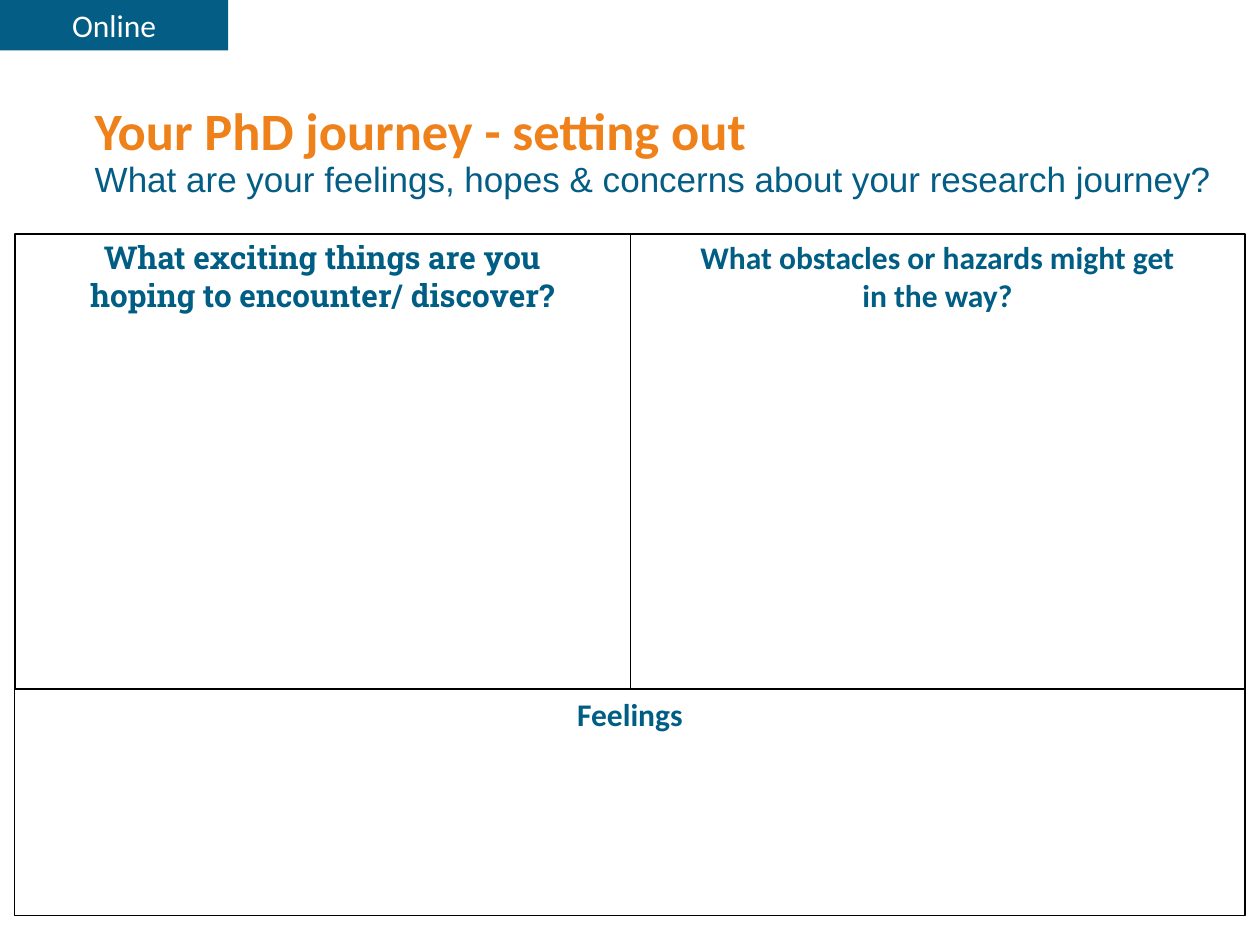
from lxml.etree import SubElement
from pptx import Presentation
from pptx.dml.color import RGBColor
from pptx.enum.shapes import MSO_CONNECTOR as LINE, MSO_SHAPE as SHAPE
from pptx.enum.text import MSO_ANCHOR as ANCHOR, PP_ALIGN as ALIGN
from pptx.oxml.ns import qn
from pptx.util import Cm, Pt


def color(code):
    return RGBColor.from_string(code)


def style(run, size, code, bold=True, face="Calibri"):
    font = run.font
    font.size, font.bold, font.name = Pt(size), bold, face
    font.color.rgb = color(code)


deck = Presentation()
deck.slide_width, deck.slide_height = Cm(25.4), Cm(19.05)
slide = deck.slides.add_slide(deck.slide_layouts[6])
shapes = slide.shapes

# Title and question, split by a line break
title = shapes.add_textbox(Cm(1.91), Cm(2.13), Cm(22.81), Cm(4.6))
frame = title.text_frame
frame.word_wrap = True
frame.margin_left = frame.margin_top = frame.margin_right = frame.margin_bottom = 0
par = frame.paragraphs[0]
par.text = ("Your PhD journey - setting out\v"
            "What are your feelings, hopes & concerns about your research journey?")
par.line_spacing = 0.9
style(par.runs[0], 30, "EF811B")
style(par.runs[1], 20, "035D85", False, "Arial")

# Outlined panels, stacked, and the tab in the corner
left, top, width = 0.3, 4.72, 24.8
tall, low = 9.17, 4.57
panels = []
for x, y, w, h, fill, line in [
    (left, top + tall, width, low, None, 0.75),
    (left, top, width, tall, None, 1),
    (0, 0, 4.6, 1.02, "035D85", None),
]:
    panel = shapes.add_shape(SHAPE.RECTANGLE, Cm(x), Cm(y), Cm(w), Cm(h))
    panel.shadow.inherit = False
    if fill:
        panel.fill.solid()
        panel.fill.fore_color.rgb = color(fill)
    else:
        panel.fill.background()
    if line:
        panel.line.color.rgb = color("000000")
        panel.line.width = Pt(line)
    else:
        panel.line.fill.background()
    panels.append(panel)
feel, upper, tab = panels

# Divider down the middle of the upper panel
mid = left + width / 2
rule = shapes.add_connector(LINE.STRAIGHT, Cm(mid), Cm(top), Cm(mid), Cm(top + tall))
rule.begin_connect(upper, 0)
rule.end_connect(upper, 2)
rule.line.color.rgb = color("000000")
rule.line.width = Pt(0.5)
SubElement(rule.element.spPr, qn("a:effectLst"))

# Headings
hopes = shapes.add_textbox(Cm(1.32), Cm(4.67), Cm(10.36), Cm(5.51))
risks = shapes.add_textbox(Cm(13.77), Cm(4.67), Cm(10.26), Cm(5.51))
for box, text, face in [
    (hopes, "What exciting things are you hoping to encounter/ discover?", "Roboto Slab"),
    (risks, "What obstacles or hazards might get in the way?", "Calibri"),
    (feel, "Feelings", "Calibri"),
]:
    frame = box.text_frame
    frame.word_wrap = True
    frame.vertical_anchor = ANCHOR.TOP
    par = frame.paragraphs[0]
    par.text = text
    par.alignment = ALIGN.CENTER
    par.space_after = Pt(6)
    style(par.runs[0], 18, "005E84", face=face)

par = tab.text_frame.paragraphs[0]
par.text = "Online"
par.alignment = ALIGN.CENTER
style(par.runs[0], 18, "FFFFFF", False)

deck.save("out.pptx")
